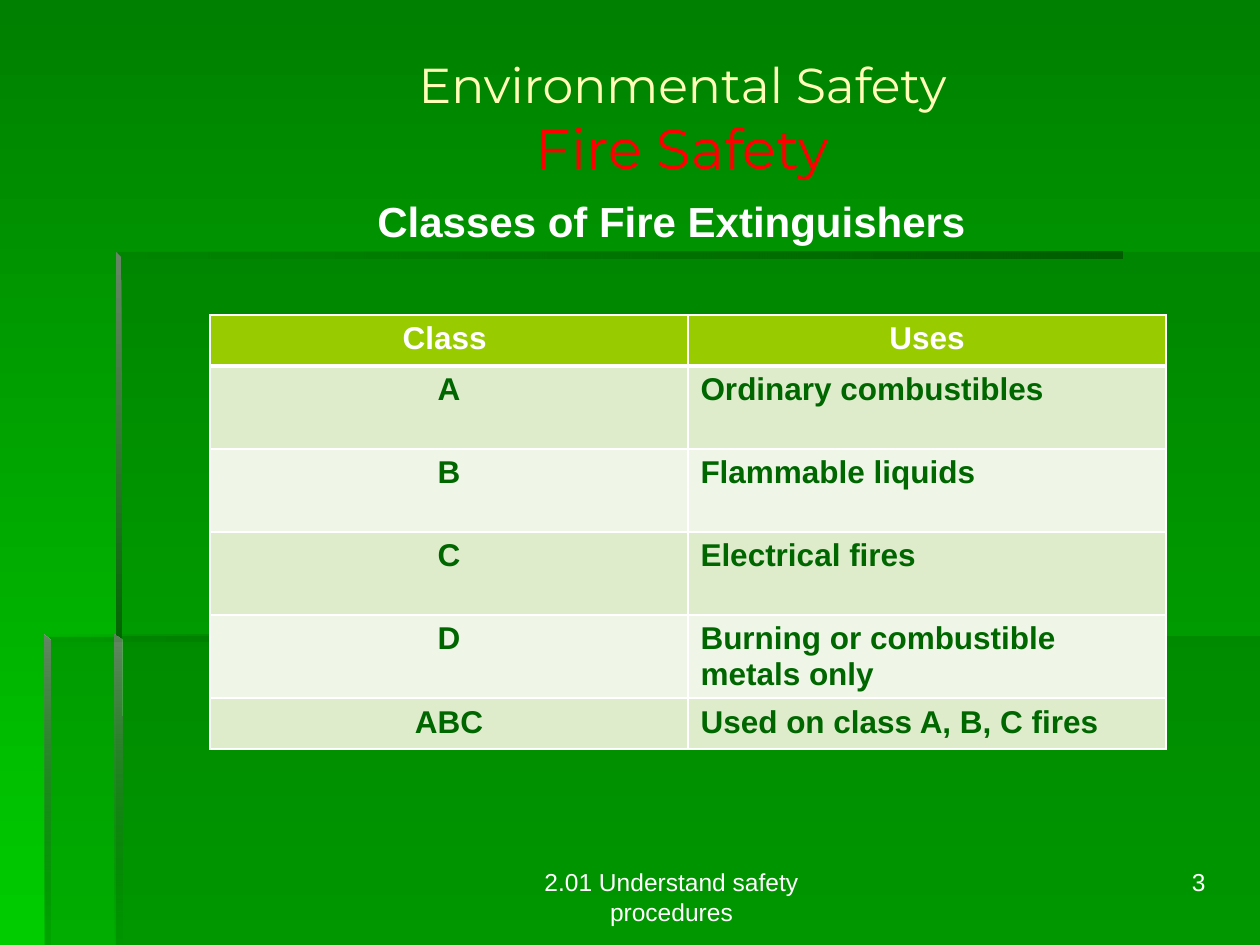
from pptx import Presentation
from pptx.dml.color import RGBColor
from pptx.enum import text as t
from pptx.oxml import parse_xml
from pptx.oxml.ns import nsdecls
from pptx.util import Pt

PX = 914400 / 126
WIDE, HIGH = 1260, 945
DARK, EDGE, PALE, WHITE = "006600", "005E00", "668666", "FFFFFF"
LEFT, MID, RIGHT = t.PP_ALIGN.LEFT, t.PP_ALIGN.CENTER, t.PP_ALIGN.RIGHT
ROWS = [
    ("Class ", "Uses"),
    ("A", "Ordinary combustibles"),
    ("B", "Flammable liquids"),
    ("C", "Electrical fires"),
    ("D", "Burning or combustible metals only"),
    ("ABC", "Used on class A, B, C fires"),
]


def px(n):
    return round(n * PX)


def rgb(code):
    return RGBColor.from_string(code)


def write(para, words, size=18, color=WHITE, font="Arial", bold=False, align=MID):
    """Add one formatted run to a paragraph."""
    para.alignment = align
    run = para.add_run()
    run.text = words
    run.font.size, run.font.name, run.font.bold = Pt(size), font, bold
    run.font.color.rgb = rgb(color)


def label(slide, box, words, **form):
    frame = slide.shapes.add_textbox(*map(px, box)).text_frame
    frame.word_wrap = True
    write(frame.paragraphs[0], words, **form)


def fade(color, alpha):
    """Set the opacity of a solid or gradient colour, in percent."""
    for node in color.iter("{*}srgbClr"):
        node.append(parse_xml(f'<a:alpha {nsdecls("a")} val="{alpha * 1000}"/>'))


def blend(fill, ends, angle):
    """Fill with a two-stop gradient, the angle counted clockwise."""
    fill.gradient()
    fill.gradient_angle = (360 - angle) % 360
    for stop, code in zip(fill.gradient_stops, ends):
        stop.color.rgb = rgb(code)


def outline(slide, points):
    pen = slide.shapes.build_freeform(*points[0], scale=PX)
    pen.add_line_segments(points[1:], close=True)
    shape = pen.convert_to_shape()
    shape.shadow.inherit = False
    shape.line.fill.background()
    return shape


def panel(slide, points):
    shape = outline(slide, points)
    shape.fill.solid()
    shape.fill.fore_color.rgb = rgb(DARK)
    fade(shape.element.spPr.find("{*}solidFill"), 30)


def bevel(slide, points, ends, angle, alphas):
    shape = outline(slide, points)
    blend(shape.fill, ends, angle)
    for stop, alpha in zip(shape.element.spPr.iter("{*}gs"), alphas):
        if alpha < 100:
            fade(stop, alpha)


def border(cell, base):
    """Draw white cell borders; the bottom one has its own width."""
    props = cell._tc.get_or_add_tcPr()
    for place, (side, width) in enumerate(zip("LRTB", (1, 1, 1, base))):
        props.insert(place, parse_xml(
            f'<a:ln{side} {nsdecls("a")} w="{Pt(width)}"><a:solidFill>'
            f'<a:srgbClr val="{WHITE}"/></a:solidFill></a:ln{side}>'))


def grid(slide):
    frame = slide.shapes.add_table(len(ROWS), 2, px(210), px(315), px(956), px(434))
    table = frame.table
    table.horz_banding = False
    for r, row in enumerate(ROWS):
        table.rows[r].height = px(51 if r in (0, len(ROWS) - 1) else 83)
        back = "99CC00" if r == 0 else ("EFF6E7", "DEECCC")[r % 2]
        for c, words in enumerate(row):
            cell = table.cell(r, c)
            cell.fill.solid()
            cell.fill.fore_color.rgb = rgb(back)
            border(cell, 1 if r else 3)
            write(cell.text_frame.paragraphs[0], words, bold=True,
                  color=DARK if r else WHITE, align=LEFT if r and c else MID)


def backdrop(slide):
    blend(slide.background.fill, ("008000", "00CC00"), 90)
    # Stepped panels
    panel(slide, [(116, 636), (116, HIGH), (WIDE, HIGH), (WIDE, 636)])
    panel(slide, [(118, 637), (45, 637), (45, HIGH), (WIDE, HIGH),
                  (WIDE, 252), (118, 252)])
    # Bevelled edges: across, then down
    across, down = (DARK, EDGE), (PALE, DARK)
    bevel(slide, [(116, 252), (116, 258), (1123, 258), (1123, 252)],
          across, 0, (0, 100))
    bevel(slide, [(116, 252), (116, 643), (122, 643), (121, 257)],
          down, 90, (100, 100))
    bevel(slide, [(115, HIGH), (122, HIGH), (121, 640), (115, 635)],
          down, 90, (100, 0))
    bevel(slide, [(44, 635), (44, 641), (674, 641), (674, 635)],
          across, 0, (0, 100))
    bevel(slide, [(44, 635), (44, HIGH), (50, HIGH), (50, 641)],
          down, 90, (100, 10))


def heading(slide):
    title = slide.shapes.title
    title.left, title.top, title.width, title.height = map(px, (105, 19, 1155, 198))
    frame = title.text_frame
    frame.auto_size = t.MSO_AUTO_SIZE.NONE
    frame.vertical_anchor = t.MSO_ANCHOR.MIDDLE
    para = frame.paragraphs[0]
    write(para, "Environmental Safety", size=28, color="FFFFB7", font="Montserrat")
    para.add_line_break()
    write(para, "Fire Safety", size=32, color="FF0000", font="Montserrat")


def main():
    deck = Presentation()
    deck.slide_width, deck.slide_height = px(WIDE), px(HIGH)
    slide = deck.slides.add_slide(deck.slide_layouts[5])
    backdrop(slide)
    heading(slide)
    grid(slide)
    label(slide, (320, 189, 703, 64), "Classes of Fire Extinguishers",
          size=24, bold=True)
    # Footer
    label(slide, (472, 861, 399, 66), "2.01 Understand safety procedures", size=14)
    label(slide, (956, 861, 262, 66), "3", size=14, align=RIGHT)
    deck.save("out.pptx")


if __name__ == "__main__":
    main()
